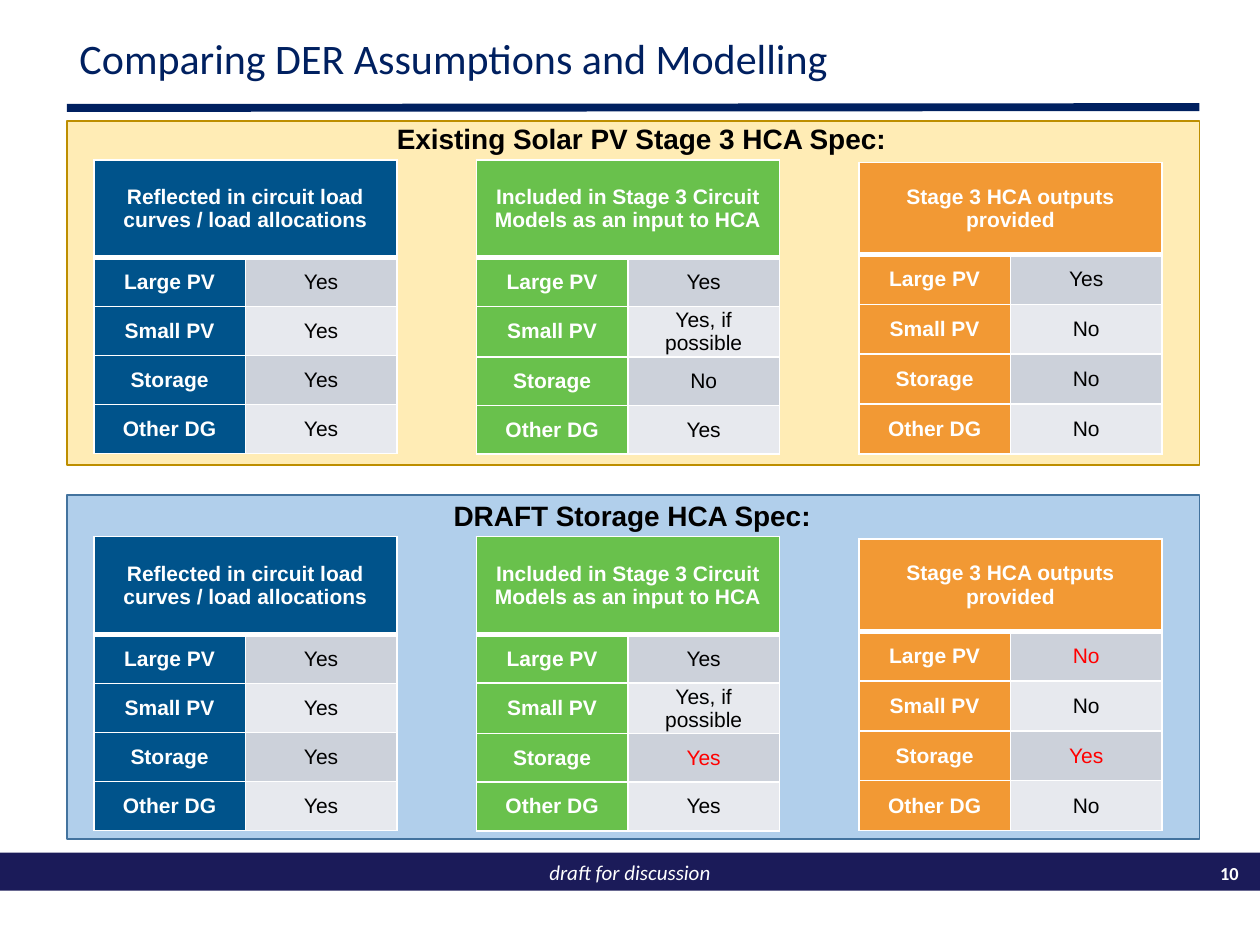
from dataclasses import dataclass

from lxml import etree
from pptx import Presentation
from pptx.dml.color import RGBColor
from pptx.enum import shapes, text
from pptx.oxml import ns
from pptx.util import Pt


@dataclass
class Theme:
    navy: str = "002060"
    footer: str = "1B1B59"
    white: str = "FFFFFF"
    black: str = "000000"
    changed: str = "FF0000"
    bands: tuple = ("CCD1DA", "E7E9EE")
    body_font: str = "Arial"
    title_font: str = "Calibri"
    title_size: float = 24
    heading_size: float = 16
    body_size: float = 12
    number_size: float = 10.5


theme = Theme()


def write(frame, wording, size, color, font=theme.body_font, bold=False,
          align=text.PP_ALIGN.CENTER, anchor=text.MSO_ANCHOR.MIDDLE):
    frame.word_wrap = True
    frame.vertical_anchor = anchor
    para = frame.paragraphs[0]
    para.text = wording
    para.alignment = align
    para.font.name = font
    para.font.size = Pt(size)
    para.font.bold = bold
    para.font.color.rgb = RGBColor.from_string(color)
    return para


def format_cell(cell, wording, fill, color, bold, top, bottom):
    properties = cell._tc.get_or_add_tcPr()
    for side, width in (("L", 1), ("R", 1), ("T", top), ("B", bottom)):
        edge = etree.SubElement(properties, ns.qn(f"a:ln{side}"), w=str(Pt(width)))
        solid = etree.SubElement(edge, ns.qn("a:solidFill"))
        etree.SubElement(solid, ns.qn("a:srgbClr"), val=theme.white)
    cell.fill.solid()
    cell.fill.fore_color.rgb = RGBColor.from_string(fill)
    cell.margin_left = cell.margin_right = Pt(5)
    cell.margin_top = cell.margin_bottom = 0
    cell.vertical_anchor = text.MSO_ANCHOR.MIDDLE
    para = cell.text_frame.paragraphs[0]
    para.text = wording
    para.alignment = text.PP_ALIGN.CENTER
    para.font.name = theme.body_font
    para.font.size = Pt(theme.body_size)
    para.font.bold = bold
    para.font.color.rgb = RGBColor.from_string(color)


deck = Presentation()
deck.slide_width, deck.slide_height = Pt(720), Pt(540)
page = deck.slides.add_slide(deck.slide_layouts[5])

LEFT, WIDTH = 38.2, 647.2

title = page.shapes.title
title.left, title.top, title.width, title.height = Pt(LEFT), Pt(18.7), Pt(WIDTH), Pt(32.4)
write(title.text_frame, "Comparing DER Assumptions and Modelling", theme.title_size,
      theme.navy, theme.title_font, align=text.PP_ALIGN.LEFT).line_spacing = 0.9

footer = page.shapes.add_shape(shapes.MSO_SHAPE.RECTANGLE, 0, Pt(487.2), Pt(720), Pt(21.8))
footer.shadow.inherit = False
footer.fill.solid()
footer.fill.fore_color.rgb = RGBColor.from_string(theme.footer)
footer.line.fill.background()
write(footer.text_frame, "draft for discussion", theme.body_size,
      theme.white, theme.title_font).font.italic = True

number = page.shapes.add_textbox(Pt(685.4), Pt(488.2), Pt(29.5), Pt(20.9))
write(number.text_frame, "10", theme.number_size, theme.white, theme.title_font,
      bold=True, align=text.PP_ALIGN.RIGHT)

rule = page.shapes.add_connector(shapes.MSO_CONNECTOR.STRAIGHT, Pt(LEFT), Pt(61.7),
                                 Pt(LEFT + WIDTH), Pt(61.2))
rule.line.color.rgb = RGBColor.from_string(theme.navy)
rule.line.width = Pt(4.5)
etree.SubElement(rule._element.spPr, ns.qn("a:effectLst"))

categories = ["Large PV", "Small PV", "Storage", "Other DG"]
columns = [
    ("Reflected in circuit load curves / load allocations", "00538B", 91.4, 55.9, 28),
    ("Included in Stage 3 Circuit Models as an input to HCA", "69C14C", 91.4, 55.9, 27.8),
    ("Stage 3 HCA outputs provided", "F29934", 92.8, 52.6, 28.5),
]
existing = [
    ["Yes", "Yes", "Yes", "Yes"],
    ["Yes", "Yes, if possible", "No", "Yes"],
    ["Yes", "No", "No", "No"],
]
draft = [
    ["Yes", "Yes", "Yes", "Yes"],
    ["Yes", "Yes, if possible", "Yes", "Yes"],
    ["No", "No", "Yes", "No"],
]
panels = [
    ("Existing Solar PV Stage 3 HCA Spec:", 226.8, 69.1, 0, "FFC000", 29, "BD8E00", existing),
    ("DRAFT Storage HCA Spec:", 259.2, 283, 215.3, "5B9BD5", 47, "43739E", draft),
]

for heading, heading_left, top, shift, fill, opacity, outline, answers in panels:
    panel = page.shapes.add_shape(shapes.MSO_SHAPE.RECTANGLE, Pt(LEFT), Pt(top),
                                  Pt(WIDTH), Pt(196.6))
    panel.shadow.inherit = False
    panel.fill.solid()
    panel.fill.fore_color.rgb = RGBColor.from_string(fill)
    shade = panel._element.spPr.find(f".//{ns.qn('a:srgbClr')}")
    etree.SubElement(shade, ns.qn("a:alpha"), val=str(opacity * 1000))
    panel.line.color.rgb = RGBColor.from_string(outline)
    panel.line.width = Pt(1)

    label = page.shapes.add_textbox(Pt(heading_left), Pt(67.7 + shift),
                                    Pt(LEFT + WIDTH - heading_left), Pt(25.9))
    frame = label.text_frame
    frame.margin_left = frame.margin_right = frame.margin_top = frame.margin_bottom = 0
    write(frame, heading, theme.heading_size, theme.black, bold=True,
          align=text.PP_ALIGN.LEFT, anchor=text.MSO_ANCHOR.TOP).line_spacing = 1.1

    for index, (header, color, table_top, header_height, row_height) in enumerate(columns):
        table = page.shapes.add_table(5, 2, Pt(53.6 + 218.6 * index), Pt(table_top + shift),
                                      Pt(173.2), Pt(header_height + 4 * row_height)).table
        for column in table.columns:
            column.width = Pt(86.6)
        for row in table.rows:
            row.height = Pt(row_height)
        table.rows[0].height = Pt(header_height)

        table.cell(0, 0).merge(table.cell(0, 1))
        for column, wording in enumerate((header, "")):
            format_cell(table.cell(0, column), wording, color, theme.white, True, 1, 3)
        for row, (category, answer) in enumerate(zip(categories, answers[index]), 1):
            edge = 3 if row == 1 else 1
            changed = answer != existing[index][row - 1]
            format_cell(table.cell(row, 0), category, color, theme.white, True, edge, 1)
            format_cell(table.cell(row, 1), answer, theme.bands[(row - 1) % 2],
                        theme.changed if changed else theme.black, False, edge, 1)

deck.save("out.pptx")
